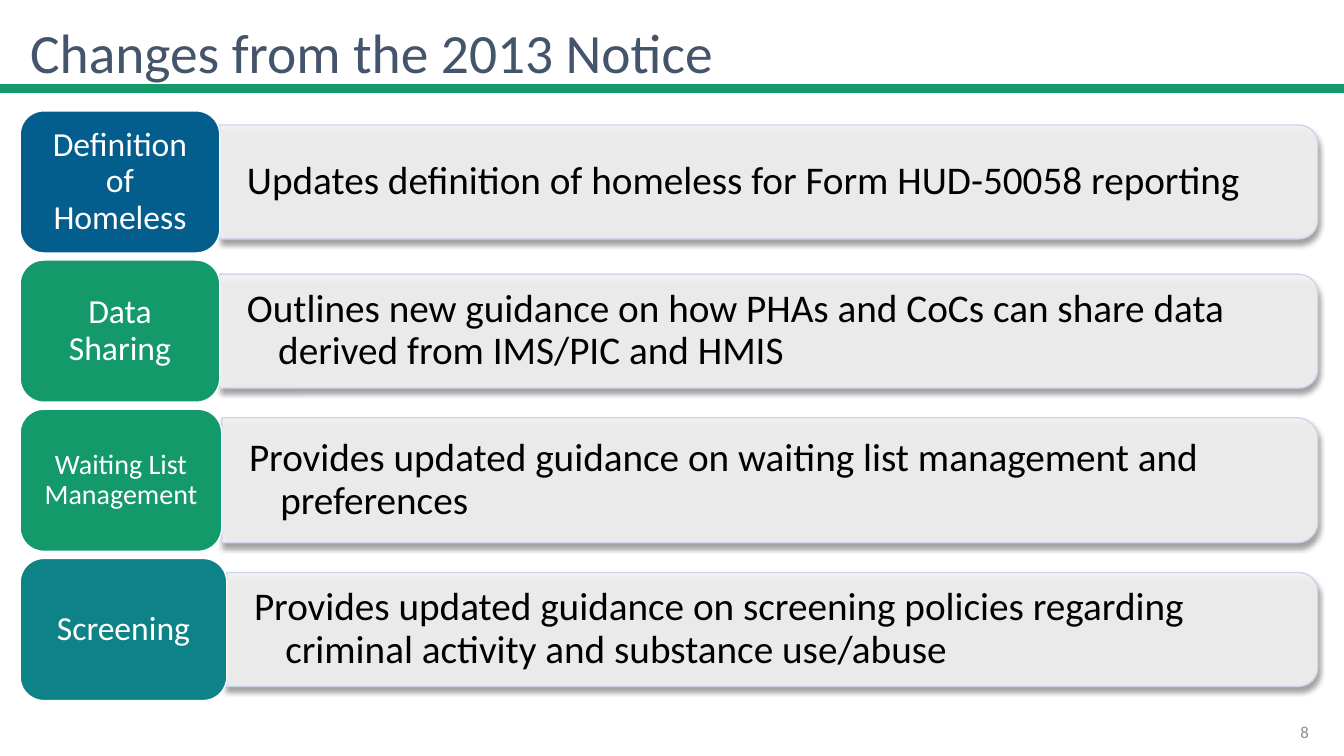
from lxml import etree
from pptx import Presentation, util as u
from pptx.dml.color import RGBColor
from pptx.enum import shapes, text
from pptx.oxml import parse_xml
from pptx.oxml.ns import nsdecls, qn

BLUE = RGBColor(0x03, 0x5E, 0x8D)
GREEN = RGBColor(0x14, 0x9A, 0x6A)
TEAL = RGBColor(0x0D, 0x82, 0x87)
SLATE = RGBColor(0x44, 0x54, 0x6A)
GREY = RGBColor(0x8C, 0x8C, 0x8C)
PANEL = RGBColor(0xF2, 0xF2, 0xF2)
PANEL_EDGE = RGBColor(0xCF, 0xD5, 0xEA)
BLACK = RGBColor(0, 0, 0)
WHITE = RGBColor(255, 255, 255)

# Content
TITLE = "Changes from the 2013 Notice"
PAGE = "8"
# label, label size, label width, label colour, panel height, description
CHANGES = [
    ("Definition of Homeless", 24, 1.98, BLUE, 1.13,
     "Updates definition of homeless for Form HUD-50058 reporting"),
    ("Data Sharing", 24, 1.98, GREEN, 1.13,
     "Outlines new guidance on how PHAs and CoCs can share data "
     "derived from IMS/PIC and HMIS"),
    ("Waiting List Management", 20, 2.0, GREEN, 1.24,
     "Provides updated guidance on waiting list management and preferences"),
    ("Screening", 24, 2.05, TEAL, 1.13,
     "Provides updated guidance on screening policies regarding "
     "criminal activity and substance use/abuse"),
]

# Grid, in inches
WIDTH, HEIGHT = 13.33, 7.5
RULE_Y = 0.88
LEFT, RIGHT = 0.2, 13.07
TOP, PITCH, LABEL_H = 1.1, 1.48, 1.41
CORNER = 0.05  # text inset that clears the panel's rounded corners
HANGING = 0.31

deck = Presentation()
deck.slide_width, deck.slide_height = u.Inches(WIDTH), u.Inches(HEIGHT)
slide = deck.slides.add_slide(deck.slide_layouts[6])


def box(left, top, width, height):
    return [u.Inches(n) for n in (left, top, width, height)]


def write(holder, words, size, color, align=text.PP_ALIGN.LEFT, spacing=0.9,
          inset=(0.1, 0.05), hanging=0):
    frame = holder.text_frame
    frame.word_wrap = True
    frame.vertical_anchor = text.MSO_ANCHOR.MIDDLE
    frame.margin_left = frame.margin_right = u.Inches(inset[0])
    frame.margin_top = frame.margin_bottom = u.Inches(inset[1])
    paragraph = frame.paragraphs[0]
    paragraph.alignment, paragraph.line_spacing = align, spacing
    if hanging:
        props = paragraph._p.get_or_add_pPr()
        props.set("marL", str(u.Inches(hanging)))
        props.set("indent", str(-u.Inches(hanging)))
    run = paragraph.add_run()
    run.text = words
    run.font.name, run.font.size = "Calibri", u.Pt(size)
    run.font.color.rgb = color


def add_block(kind, place, fill, edge):
    block = slide.shapes.add_shape(kind, *place)
    block.shadow.inherit = False
    block.fill.solid()
    block.fill.fore_color.rgb = fill
    block.line.color.rgb, block.line.width = edge, u.Pt(1)
    return block


def soften(panel):
    """Make the panel slightly see-through and give it a shadow below."""
    props = panel._element.spPr
    tint = props.find(qn("a:solidFill"))[0]
    etree.SubElement(tint, qn("a:alpha"), val="90000")
    props.find(qn("a:effectLst")).append(parse_xml(
        f'<a:outerShdw {nsdecls("a")} blurRad="{u.Pt(4)}" dist="{u.Pt(3)}" '
        'dir="5400000" rotWithShape="0"><a:srgbClr val="000000">'
        '<a:alpha val="40000"/></a:srgbClr></a:outerShdw>'))


# Rule under the title
rule = slide.shapes.add_connector(
    shapes.MSO_CONNECTOR.STRAIGHT, 0, u.Inches(RULE_Y),
    deck.slide_width, u.Inches(RULE_Y))
rule.line.color.rgb, rule.line.width = GREEN, u.Pt(6)
etree.SubElement(rule._element.spPr, qn("a:effectLst"))

# One row per change: panel, description, label
for row, (label, size, label_w, color, panel_h, description) in enumerate(CHANGES):
    top = TOP + row * PITCH
    middle = top + LABEL_H / 2
    panel_left = LEFT + label_w
    panel_w = RIGHT - panel_left

    # The panel is turned a quarter so its rounded end faces right
    panel = add_block(
        shapes.MSO_SHAPE.ROUND_2_SAME_RECTANGLE,
        box((panel_left + RIGHT - panel_h) / 2, middle - panel_w / 2,
            panel_h, panel_w), PANEL, PANEL_EDGE)
    panel.rotation = 90
    soften(panel)

    detail = slide.shapes.add_textbox(*box(
        panel_left, middle - panel_h / 2 + CORNER,
        panel_w - CORNER, panel_h - 2 * CORNER))
    write(detail, description, 28, BLACK, inset=(0.27, 0.14), hanging=HANGING)

    tab = add_block(shapes.MSO_SHAPE.ROUNDED_RECTANGLE,
                    box(LEFT, top, label_w, LABEL_H), color, WHITE)
    write(tab, label, size, WHITE, align=text.PP_ALIGN.CENTER,
          inset=(0.08, 0.04) if size < 24 else (0.1, 0.05))

# Page number and title
page = slide.shapes.add_textbox(*box(10.08, 7.06, 3, 0.4))
write(page, PAGE, 12, GREY, align=text.PP_ALIGN.RIGHT, spacing=1.0)
heading = slide.shapes.add_textbox(*box(LEFT, 0.21, 9.75, 0.69))
write(heading, TITLE, 39.6, SLATE)

deck.save("out.pptx")
